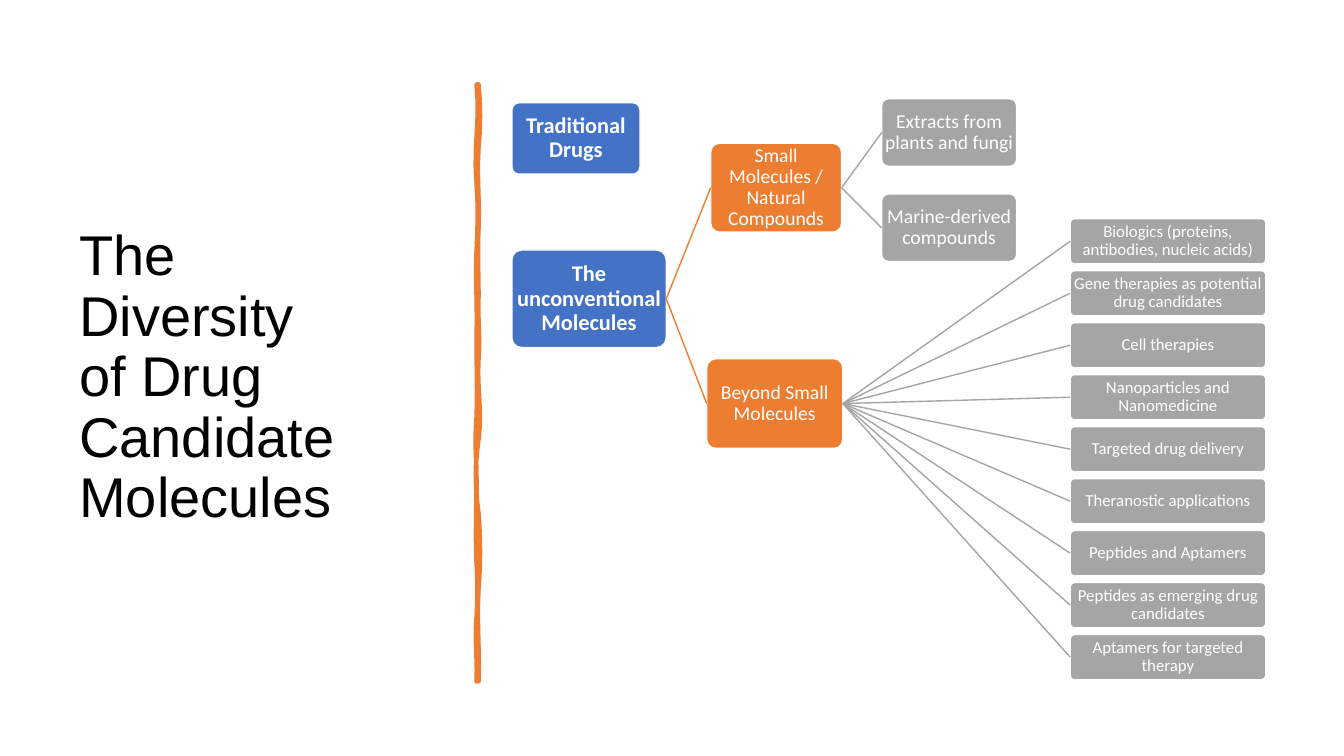
import pptx
import pptx.dml.color
import pptx.enum.shapes
import pptx.enum.text
import pptx.oxml.ns
import pptx.util
from lxml import etree

Cm = pptx.util.Cm
Pt = pptx.util.Pt

BLUE, ORANGE, GRAY = "4472C4", "ED7D31", "A5A5A5"
WHITE, BLACK = "FFFFFF", "000000"


def color(value):
    return pptx.dml.color.RGBColor.from_string(value)


class DiagramSlide:
    heading_font = "Arial"
    label_font = "Calibri"
    line_spacing = 0.9

    def __init__(self, slide):
        self.slide = slide

    def set_text(self, frame, text, font, size, ink, bold=False):
        frame.word_wrap = True
        frame.vertical_anchor = pptx.enum.text.MSO_ANCHOR.MIDDLE
        paragraph = frame.paragraphs[0]
        paragraph.text = text
        paragraph.line_spacing = self.line_spacing
        paragraph.font.name = font
        paragraph.font.size = Pt(size)
        paragraph.font.bold = bold
        paragraph.font.color.rgb = color(ink)
        return paragraph

    def heading(self, text, left, top, width, height):
        box = self.slide.shapes.add_textbox(Cm(left), Cm(top), Cm(width), Cm(height))
        self.set_text(box.text_frame, text, self.heading_font, 40, BLACK)

    def node(self, text, left, top, width, height, fill, size, bold=False):
        box = self.slide.shapes.add_shape(
            pptx.enum.shapes.MSO_SHAPE.ROUNDED_RECTANGLE,
            Cm(left), Cm(top), Cm(width), Cm(height))
        box.adjustments[0] = 0.1
        box.shadow.inherit = False
        box.fill.solid()
        box.fill.fore_color.rgb = color(fill)
        box.line.color.rgb = color(WHITE)
        box.line.width = Pt(1)
        frame = box.text_frame
        frame.margin_left = frame.margin_right = Cm(0.03)
        frame.margin_top = frame.margin_bottom = Cm(0.03)
        paragraph = self.set_text(frame, text, self.label_font, size, WHITE, bold)
        paragraph.alignment = pptx.enum.text.PP_ALIGN.CENTER
        return box

    def branch(self, parent, child, stroke):
        link = self.slide.shapes.add_connector(
            pptx.enum.shapes.MSO_CONNECTOR.STRAIGHT, 0, 0, 0, 0)
        link.begin_connect(parent, 3)
        link.end_connect(child, 1)
        link.line.color.rgb = color(stroke)
        link.line.width = Pt(1)
        properties = link._element.spPr
        etree.SubElement(properties, pptx.oxml.ns.qn("a:effectLst"))

    def brush_stroke(self, edges, fill):
        points = [point for edge in edges for point in wavy_edge(*edge)]
        builder = self.slide.shapes.build_freeform(
            Cm(points[0][0]), Cm(points[0][1]))
        builder.add_line_segments([(Cm(x), Cm(y)) for x, y in points[1:]], close=True)
        stroke = builder.convert_to_shape()
        stroke.shadow.inherit = False
        stroke.fill.solid()
        stroke.fill.fore_color.rgb = color(fill)
        stroke.line.color.rgb = color(fill)
        stroke.line.width = Pt(3.25)


def wavy_edge(x, joints, bends):
    steps = 6
    points = [(x, joints[0])]
    for start, end, (first, second) in zip(joints, joints[1:], bends):
        for step in range(1, steps + 1):
            t = step / steps
            sway = 3 * t * (1 - t) * ((1 - t) * first + t * second)
            points.append((x + sway, start + t * (end - start)))
    return points


RIGHT_EDGE = (
    12.06,
    [2.13, 3.71, 5.74, 7.47, 9.04, 11.07, 12.95, 14.83, 17.17],
    [(0.05, 0.05), (-0.05, 0.03), (-0.03, 0), (-0.03, 0.05),
     (-0.05, 0.1), (-0.1, -0.08), (0.05, 0.05), (-0.05, 0.03)])
LEFT_EDGE = (
    12.01,
    [17.17, 15.57, 14.15, 12.12, 10.54, 8.51, 6.35, 4.6, 2.13],
    [(0.03, -0.05), (0.03, 0.03), (-0.03, 0), (0, -0.05),
     (0.03, 0), (0.03, -0.03), (0.03, 0.05), (-0.08, 0.1)])

NATURAL_SOURCES = ["Extracts from plants and fungi", "Marine-derived compounds"]
NEW_MODALITIES = [
    "Biologics (proteins, antibodies, nucleic acids)",
    "Gene therapies as potential drug candidates",
    "Cell therapies",
    "Nanoparticles and Nanomedicine",
    "Targeted drug delivery",
    "Theranostic applications",
    "Peptides and Aptamers",
    "Peptides as emerging drug candidates",
    "Aptamers for targeted therapy",
]


def main():
    deck = pptx.Presentation()
    deck.slide_width, deck.slide_height = Cm(33.87), Cm(19.05)
    diagram = DiagramSlide(deck.slides.add_slide(deck.slide_layouts[6]))

    diagram.heading("The Diversity of Drug Candidate Molecules", 1.75, 1.78, 7.06, 15.52)
    diagram.brush_stroke([RIGHT_EDGE, LEFT_EDGE], ORANGE)

    diagram.node("Traditional Drugs", 12.9, 2.59, 3.23, 1.8, BLUE, 16, True)
    unconventional = diagram.node(
        "The unconventional Molecules", 12.9, 6.3, 3.89, 2.46, BLUE, 16, True)
    small = diagram.node(
        "Small Molecules / Natural Compounds", 17.91, 3.61, 3.3, 2.24, ORANGE, 14)
    beyond = diagram.node("Beyond Small Molecules", 17.81, 9.04, 3.43, 2.26, ORANGE, 14)
    for family in (small, beyond):
        diagram.branch(unconventional, family, ORANGE)

    for row, label in enumerate(NATURAL_SOURCES):
        source = diagram.node(label, 22.22, 2.49 + 2.4 * row, 3.4, 1.7, GRAY, 14)
        diagram.branch(small, source, GRAY)
    for row, label in enumerate(NEW_MODALITIES):
        modality = diagram.node(label, 26.97, 5.51 + 1.31 * row, 4.93, 1.14, GRAY, 12)
        diagram.branch(beyond, modality, GRAY)

    deck.save("out.pptx")


if __name__ == "__main__":
    main()
